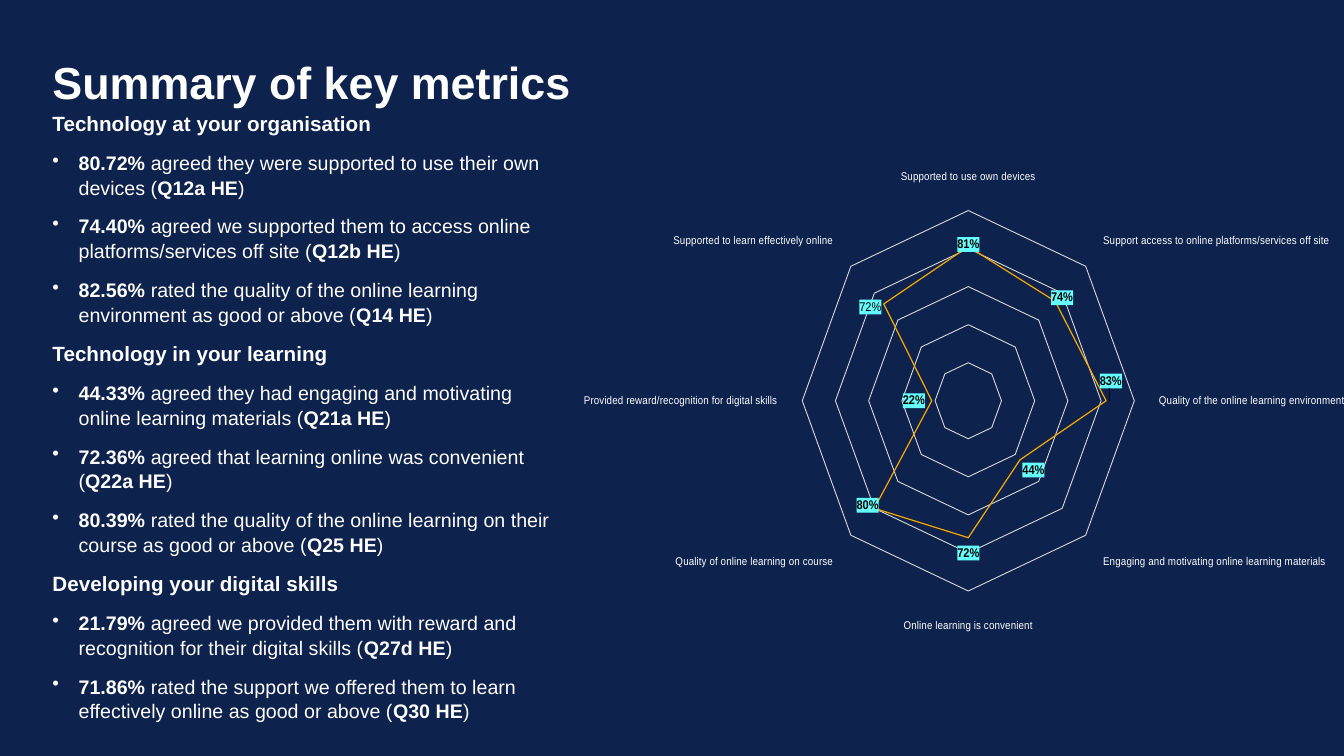
"""Build the slide that sums up the key survey metrics."""
from dataclasses import dataclass

from lxml import etree
from pptx import Presentation
from pptx import util as u
from pptx.chart import data
from pptx.dml.color import RGBColor
from pptx.enum import chart as kinds, text
from pptx.oxml import ns, parse_xml


@dataclass(frozen=True)
class Theme:
    """Hold the colours, font and type sizes of the deck."""
    back: str = "0D224C"
    ink: str = "FFFFFF"
    grid: str = "D9D9D9"
    line: str = "F8A800"
    tag: str = "66FFFF"
    dark: str = "000000"
    font: str = "Arial"
    title: float = 32
    head: float = 14.7
    body: float = 14
    axis: float = 8
    label: float = 9


THEME = Theme()

TOPICS = {
    "Technology at your organisation": [
        ("80.72%", "agreed they were supported to use their own devices", "Q12a HE"),
        ("74.40%", "agreed we supported them to access online platforms/services off site", "Q12b HE"),
        ("82.56%", "rated the quality of the online learning environment as good or above", "Q14 HE"),
    ],
    "Technology in your learning": [
        ("44.33%", "agreed they had engaging and motivating online learning materials", "Q21a HE"),
        ("72.36%", "agreed that learning online was convenient", "Q22a HE"),
        ("80.39%", "rated the quality of the online learning on their course as good or above", "Q25 HE"),
    ],
    "Developing your digital skills": [
        ("21.79%", "agreed we provided them with reward and recognition for their digital skills", "Q27d HE"),
        ("71.86%", "rated the support we offered them to learn effectively online as good or above", "Q30 HE"),
    ],
}

SCORES = {
    "Supported to use own devices": 0.81,
    "Support access to online platforms/services off site": 0.74,
    "Quality of the online learning environment": 0.83,
    "Engaging and motivating online learning materials": 0.44,
    "Online learning is convenient": 0.72,
    "Quality of online learning on course": 0.8,
    "Provided reward/recognition for digital skills": 0.22,
    "Supported to learn effectively online": 0.72,
}

SHIFTS = {0: (0, 0.02), 1: (-0.01, 0.01), 2: (-0.02, -0.03), 5: (0.01, -0.02), 7: (0, 0.02)}


def style(font, size, color=THEME.ink, bold=False):
    """Set the face, size, colour and weight of a font."""
    font.name = THEME.font
    font.size = u.Pt(size)
    font.bold = bold
    font.color.rgb = RGBColor.from_string(color)


def write(par, words, size=THEME.body, **look):
    """Add one run of formatted text to a paragraph."""
    run = par.add_run()
    run.text = words
    style(run.font, size, **look)


def place(shape, box):
    """Move a shape to a box given in inches."""
    shape.left, shape.top, shape.width, shape.height = map(u.Inches, box)


def clear(frame):
    """Make a text frame wrap from its top with no margins."""
    frame.word_wrap = True
    frame.auto_size = text.MSO_AUTO_SIZE.NONE
    frame.vertical_anchor = text.MSO_ANCHOR.TOP
    frame.margin_left = frame.margin_right = frame.margin_top = frame.margin_bottom = 0


def bullet(par):
    """Give a paragraph a round bullet with a hanging indent."""
    props = par._p.get_or_add_pPr()
    props.set("marL", str(u.Inches(0.26)))
    props.set("indent", str(u.Inches(-0.26)))
    etree.SubElement(props, ns.qn("a:buChar")).set("char", "•")


def add_title(slide, box):
    """Fill the title placeholder in the given box."""
    title = slide.shapes.title
    place(title, box)
    frame = title.text_frame
    clear(frame)
    frame.margin_top = u.Inches(0.04)
    par = frame.paragraphs[0]
    par.alignment = text.PP_ALIGN.LEFT
    write(par, "Summary of key metrics", THEME.title, bold=True)


def add_notes(slide, box):
    """List the findings of each topic in the given box."""
    frame = slide.shapes.add_textbox(*map(u.Inches, box)).text_frame
    clear(frame)
    par = frame.paragraphs[0]
    for topic, facts in TOPICS.items():
        if par.runs:
            par = frame.add_paragraph()
        write(par, topic, THEME.head, bold=True)
        for share, claim, code in facts:
            par = frame.add_paragraph()
            bullet(par)
            write(par, share, bold=True)
            write(par, f" {claim} (")
            write(par, code, bold=True)
            write(par, ")")
    for par in frame.paragraphs:
        par.space_before = u.Pt(10)
        par.line_spacing = 1.05


def layout(x, y, size=None):
    """Return a manual chart layout, for a whole plot if it has a size."""
    parts = [("x", x), ("y", y)]
    if size:
        parts = [("layoutTarget", "inner"), ("xMode", "edge"), ("yMode", "edge"),
                 *parts, ("w", size[0]), ("h", size[1])]
    inner = "".join(f'<c:{tag} val="{val}"/>' for tag, val in parts)
    return parse_xml(f'<c:layout {ns.nsdecls("c")}><c:manualLayout>{inner}'
                     '</c:manualLayout></c:layout>')


def tint(label):
    """Put the tag colour behind a chart label."""
    fill = parse_xml(f'<c:spPr {ns.nsdecls("c", "a")}><a:solidFill>'
                     f'<a:srgbClr val="{THEME.tag}"/></a:solidFill></c:spPr>')
    label.find(ns.qn("c:txPr")).addprevious(fill)


def add_tags(series):
    """Label the points of the series and shift some of the labels."""
    labels = series.data_labels
    labels.show_value = True
    labels.number_format = "0%"
    labels.number_format_is_linked = False
    style(labels.font, THEME.label, color=THEME.dark, bold=True)
    for spot, shift in SHIFTS.items():
        style(series.points[spot].data_label.font, THEME.label, color=THEME.dark, bold=spot != 7)
    group = labels._element
    for label, shift in zip(group.findall(ns.qn("c:dLbl")), SHIFTS.values()):
        label.insert(1, layout(*shift))
        form = parse_xml(f'<c:numFmt {ns.nsdecls("c")} formatCode="0%" sourceLinked="0"/>')
        label.find(ns.qn("c:txPr")).addprevious(form)
        tint(label)
    tint(group)


def add_radar(slide, box):
    """Draw the scores as a radar chart in the given box."""
    facts = data.CategoryChartData(number_format="0%")
    facts.categories = list(SCORES)
    facts.add_series("Series 1", list(SCORES.values()))
    chart = slide.shapes.add_chart(kinds.XL_CHART_TYPE.RADAR, *map(u.Inches, box), facts).chart
    chart.has_legend = chart.has_title = False
    style(chart.font, 10, color=THEME.dark)
    cats, vals = chart.category_axis, chart.value_axis
    style(cats.tick_labels.font, THEME.axis)
    cats.major_tick_mark = kinds.XL_TICK_MARK.OUTSIDE
    vals.minimum_scale, vals.maximum_scale, vals.major_unit = 0, 1, 0.2
    vals.visible = False
    lines = [axis.major_gridlines.format.line for axis in (cats, vals)]
    for line in [cats.format.line, *lines]:
        line.width = u.Pt(0.75)
        line.color.rgb = RGBColor.from_string(THEME.grid)
    series = chart.plots[0].series[0]
    series.smooth = False
    series.format.line.width = u.Pt(1)
    series.format.line.color.rgb = RGBColor.from_string(THEME.line)
    add_tags(series)
    area = chart._chartSpace.chart.plotArea
    for old in area.findall(ns.qn("c:layout")):
        area.remove(old)
    area.insert(0, layout(0.23, 0.21, (0.5, 0.64)))


def main():
    """Build and save the deck."""
    deck = Presentation()
    deck.slide_width, deck.slide_height = u.Inches(13.33), u.Inches(7.5)
    slide = deck.slides.add_slide(deck.slide_layouts[5])
    back = slide.background.fill
    back.solid()
    back.fore_color.rgb = RGBColor.from_string(THEME.back)
    add_title(slide, (0.52, 0.5, 9.5, 0.5))
    add_notes(slide, (0.52, 1.09, 5.05, 6.11))
    add_radar(slide, (5.79, 0.5, 7.55, 6.56))
    deck.save("out.pptx")


if __name__ == "__main__":
    main()
